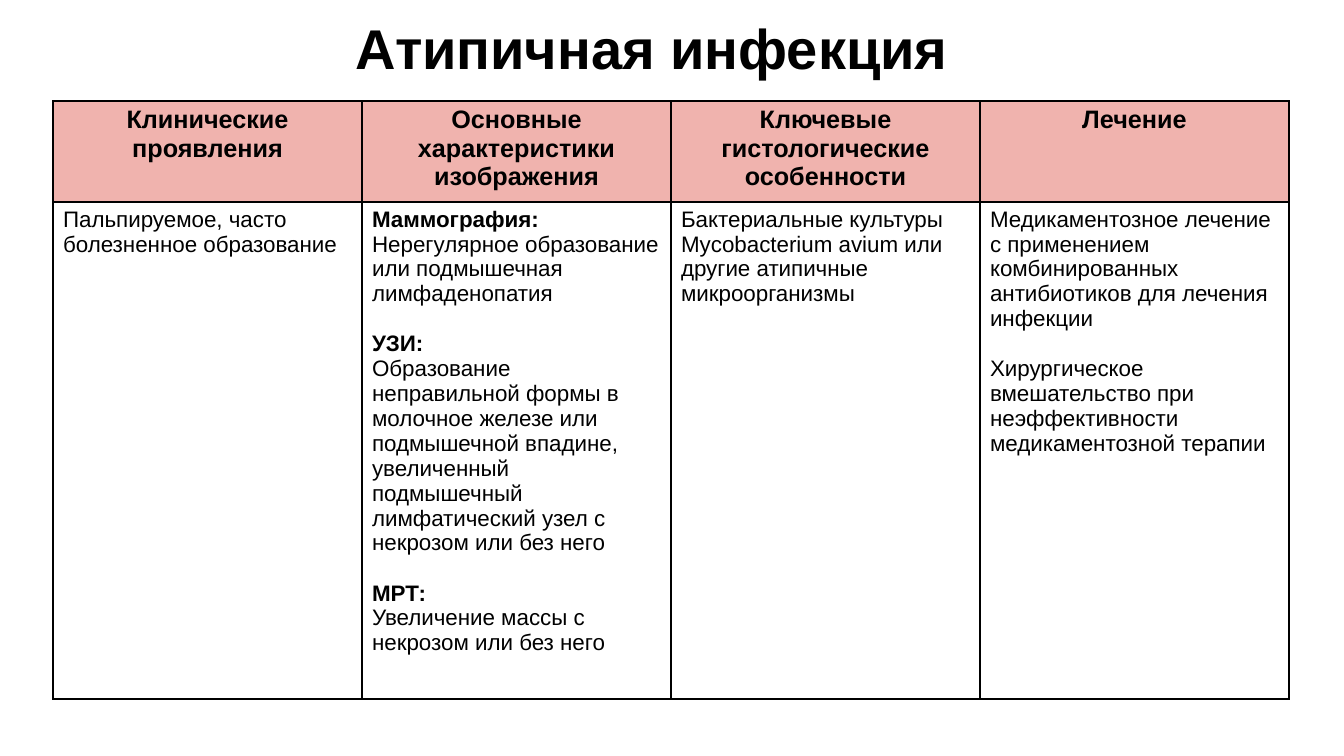
import pptx
import pptx.util
import pptx.dml.color
import pptx.enum.text
import pptx.oxml

PX = 914400 / 100.8
ALIGN = pptx.enum.text.PP_ALIGN
NS = "http://schemas.openxmlformats.org/drawingml/2006/main"


def emu(px):
    return pptx.util.Emu(round(px * PX))


def color(value):
    return pptx.dml.color.RGBColor.from_string(value)


class SlideBuilder:
    font, ink, pink, white = "Arial", "000000", "F0B3AE", "FFFFFF"
    title = {"size": pptx.util.Pt(40), "bold": True}
    header = {"size": pptx.util.Pt(18), "bold": True}
    body = {"size": pptx.util.Pt(16), "bold": False}
    label = {"size": pptx.util.Pt(16), "bold": True}

    def __init__(self, prs):
        self.slide = prs.slides.add_slide(prs.slide_layouts[6])

    def add_text(self, p, text, style, align=ALIGN.LEFT):
        p.alignment = align
        r = p.add_run()
        r.text = text
        for name, value in {"name": self.font, **style}.items():
            setattr(r.font, name, value)
        r.font.color.rgb = color(self.ink)

    def text_box(self, x, y, w, h, text, style):
        sp = self.slide.shapes.add_textbox(*map(emu, (x, y, w, h)))
        sp.text_frame.word_wrap = False
        self.add_text(sp.text_frame.paragraphs[0], text, style, ALIGN.CENTER)

    def border(self, cell):
        tcPr = cell._tc.get_or_add_tcPr()
        for side in "LRTB":
            tcPr.append(pptx.oxml.parse_xml(
                f'<a:ln{side} xmlns:a="{NS}" w="12700"><a:solidFill>'
                f'<a:srgbClr val="{self.ink}"/></a:solidFill></a:ln{side}>'))

    def cell(self, cell, sections, fill, style, align=ALIGN.LEFT):
        """Each section is a (label, text) pair; the label may be empty."""
        self.border(cell)
        cell.fill.solid()
        cell.fill.fore_color.rgb = color(fill)
        tf = cell.text_frame
        p = tf.paragraphs[0]
        for i, (label, text) in enumerate(sections):
            if i:
                p = tf.add_paragraph()
                p.space_before = pptx.util.Pt(18)
            if label:
                self.add_text(p, label, self.label)
                p = tf.add_paragraph()
            self.add_text(p, text, style, align)

    def table(self, x, y, col_width, row_heights, columns):
        table = self.slide.shapes.add_table(
            len(row_heights), len(columns), emu(x), emu(y),
            emu(col_width * len(columns)), emu(sum(row_heights))).table
        table.first_row = table.horz_banding = False
        for row, height in zip(table.rows, row_heights):
            row.height = emu(height)
        for i, (heading, sections) in enumerate(columns):
            table.columns[i].width = emu(col_width)
            self.cell(table.cell(0, i), [("", heading)], self.pink,
                      self.header, ALIGN.CENTER)
            self.cell(table.cell(1, i), sections, self.white, self.body)


COLUMNS = [
    ("Клинические проявления",
     [("", "Пальпируемое, часто болезненное образование")]),
    ("Основные характеристики изображения",
     [("Маммография:",
       "Нерегулярное образование или подмышечная лимфаденопатия"),
      ("УЗИ:",
       "Образование неправильной формы в молочное железе или подмышечной "
       "впадине, увеличенный подмышечный лимфатический узел с некрозом "
       "или без него"),
      ("МРТ:", "Увеличение массы с некрозом или без него")]),
    ("Ключевые гистологические особенности",
     [("", "Бактериальные культуры Mycobacterium avium или другие "
           "атипичные микроорганизмы")]),
    ("Лечение",
     [("", "Медикаментозное лечение с применением комбинированных "
           "антибиотиков для лечения инфекции"),
      ("", "Хирургическое вмешательство при неэффективности "
           "медикаментозной терапии")]),
]


def main():
    prs = pptx.Presentation()
    prs.slide_width, prs.slide_height = emu(1344), emu(756)
    s = SlideBuilder(prs)

    # Title
    s.text_box(342, 9, 619, 78, "Атипичная инфекция", s.title)

    # Findings and treatment table
    s.table(53, 101, 309, (101, 497), COLUMNS)

    prs.save("out.pptx")


if __name__ == "__main__":
    main()
